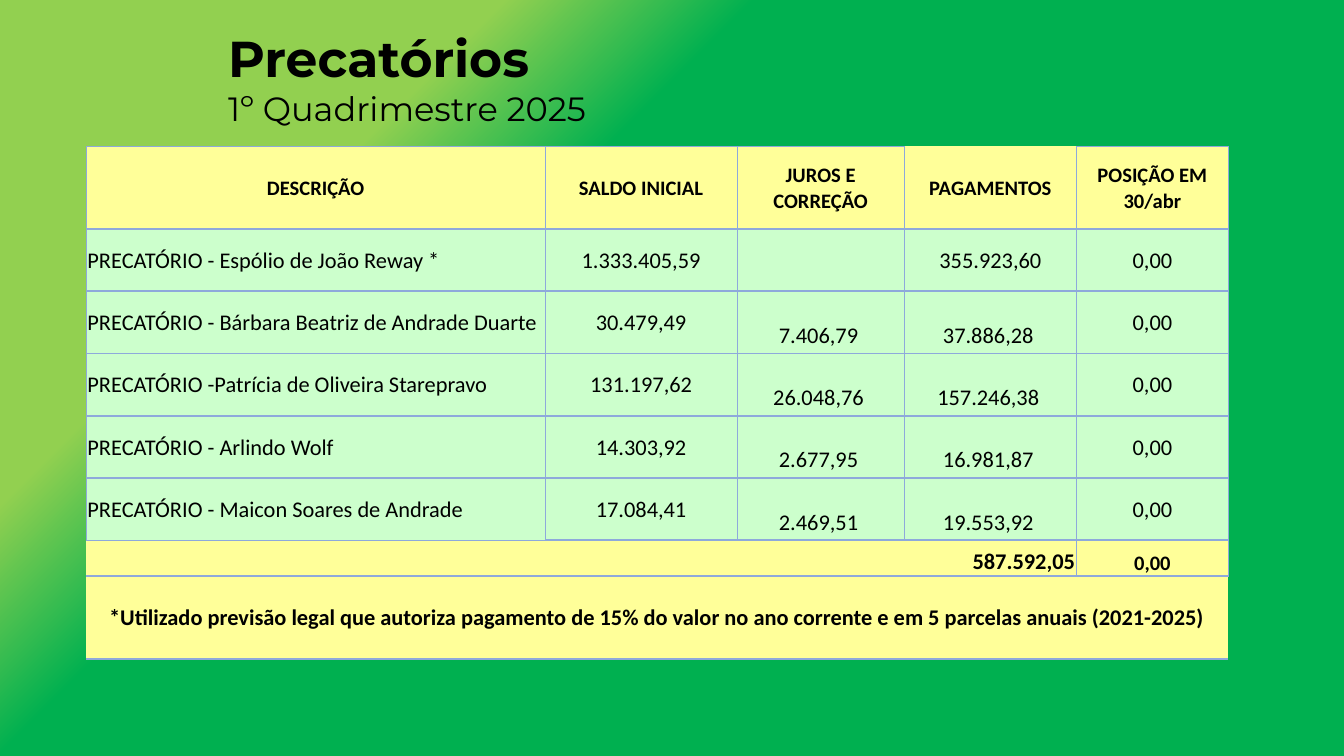
import pptx
import pptx.dml.color
import pptx.enum.text
import pptx.oxml
import pptx.util
from lxml import etree

EMU_PER_PX = 4762.5
ALIGN = pptx.enum.text.PP_ALIGN
ANCHOR = pptx.enum.text.MSO_ANCHOR
YELLOW, MINT, BORDER, BLACK = "FFFF99", "CCFFCC", "8EA9DB", "000000"
COLUMNS = [656, 274, 239, 246, 217]
ROWS = [118] + [89] * 5 + [51, 119]
HEADERS = ["DESCRIÇÃO", "SALDO INICIAL", "JUROS E CORREÇÃO", "PAGAMENTOS", "POSIÇÃO EM 30/abr"]
DEBTS = [
    ["PRECATÓRIO - Espólio de João Reway *", "1.333.405,59", "", "355.923,60", "0,00"],
    ["PRECATÓRIO - Bárbara Beatriz de Andrade Duarte", "30.479,49", "7.406,79", "37.886,28", "0,00"],
    ["PRECATÓRIO -Patrícia de Oliveira Starepravo", "131.197,62", "26.048,76", "157.246,38", "0,00"],
    ["PRECATÓRIO - Arlindo Wolf", "14.303,92", "2.677,95", "16.981,87", "0,00"],
    ["PRECATÓRIO - Maicon Soares de Andrade", "17.084,41", "2.469,51", "19.553,92", "0,00"],
]
TOTALS = ["", "", "", "587.592,05", "0,00"]
FOOTNOTE = ("*Utilizado previsão legal que autoriza pagamento de 15% do valor no ano corrente "
            "e em 5 parcelas anuais (2021-2025)")


def px(length):
    """Turn whole pixels into EMU."""
    return pptx.util.Emu(round(length * EMU_PER_PX))


def colour(value):
    """Turn a hex string into a colour."""
    return pptx.dml.color.RGBColor.from_string(value)


def apply(target, formats):
    """Set every attribute of a dict of format values."""
    for name, value in formats.items():
        setattr(target, name, value)


def add_span(para, text, size, bold, font):
    """Add a black run of text."""
    span = para.add_run()
    span.text = text
    apply(span.font, {"size": pptx.util.Pt(size), "bold": bold, "name": font})
    span.font.color.rgb = colour(BLACK)


def paint_background(page):
    """Fill the page with a diagonal gradient of two greens."""
    fill = page.background.fill
    fill.gradient()
    fill.gradient_angle = 315
    for stop, position, value in zip(fill.gradient_stops, (0.24, 0.36), ("92D050", "00B050")):
        stop.position = position
        stop.color.rgb = colour(value)


def add_heading(page, left, top, width, height):
    """Place the title and the period below it."""
    box = page.shapes.add_textbox(px(left), px(top), px(width), px(height))
    apply(box.text_frame, {"word_wrap": True, "vertical_anchor": ANCHOR.BOTTOM})
    para = box.text_frame.paragraphs[0]
    add_span(para, "Precatórios", 27, True, "Montserrat")
    para.add_line_break()
    add_span(para, "1º Quadrimestre 2025", 18, False, "Montserrat")


def draw_borders(cell, widths):
    """Draw the four sides of a cell, leaving out those of width 0."""
    properties = cell._tc.get_or_add_tcPr()
    for side, width in zip("LRTB", widths):
        line = etree.SubElement(properties, pptx.oxml.ns.qn(f"a:ln{side}"), w=str(pptx.util.Pt(width)))
        if width:
            fill = etree.SubElement(line, pptx.oxml.ns.qn("a:solidFill"))
            etree.SubElement(fill, pptx.oxml.ns.qn("a:srgbClr"), val=BORDER)
        else:
            etree.SubElement(line, pptx.oxml.ns.qn("a:noFill"))


def border_widths(row, column):
    """Give the left, right, top and bottom border widths of a cell."""
    total, footnote = len(ROWS) - 2, len(ROWS) - 1
    left = right = 0.5
    top = bottom = 1
    if row == 0:
        top = 0 if column == 3 else 0.5
    if column == 0 and row == total - 1:
        bottom = 0.5
    if column == 0 and row == total:
        top = 0.5
    if row == footnote or (row == total and column < 4):
        left = 0
    if row == footnote or (row == total and column < 3):
        right = 0
    return left, right, top, bottom


def fill_cell(cell, text, row, column):
    """Write and format one table cell."""
    debt = 0 < row <= len(DEBTS)
    total = row == len(ROWS) - 2
    lowered = 1 < row <= len(DEBTS) and column in (2, 3)
    size = 11 if row == 0 or (total and column == 4) else 12
    draw_borders(cell, border_widths(row, column))
    cell.fill.solid()
    cell.fill.fore_color.rgb = colour(MINT if debt else YELLOW)
    apply(cell, {
        "margin_left": px(2), "margin_right": px(8 if lowered else 2),
        "margin_top": px(2), "margin_bottom": px(6 if lowered else 0),
        "vertical_anchor": ANCHOR.BOTTOM if lowered or total else ANCHOR.MIDDLE,
    })
    para = cell.text_frame.paragraphs[0]
    para.alignment = ALIGN.CENTER
    if debt and column == 0:
        para.alignment = ALIGN.LEFT
    if total and column == 3:
        para.alignment = ALIGN.RIGHT
    if text:
        add_span(para, text, size, not debt, "Calibri")
    else:
        etree.SubElement(para._p, pptx.oxml.ns.qn("a:endParaRPr"), sz=str(size * 100))


def add_debt_table(page, left, top):
    """Place the table of court-ordered debts."""
    frame = page.shapes.add_table(len(ROWS), len(COLUMNS), px(left), px(top), px(sum(COLUMNS)), px(sum(ROWS)))
    table = frame.table
    for column, width in zip(table.columns, COLUMNS):
        column.width = px(width)
    for row, height in zip(table.rows, ROWS):
        row.height = px(height)
    contents = [HEADERS, *DEBTS, TOTALS, [FOOTNOTE, "", "", "", ""]]
    for row, texts in enumerate(contents):
        for column, text in enumerate(texts):
            fill_cell(table.cell(row, column), text, row, column)
    last = len(ROWS) - 1
    table.cell(last, 0).merge(table.cell(last, len(COLUMNS) - 1))


def main():
    """Build the deck and save it."""
    deck = pptx.Presentation()
    apply(deck, {"slide_width": px(1920), "slide_height": px(1080)})
    page = deck.slides.add_slide(deck.slide_layouts[6])
    paint_background(page)
    add_heading(page, 307, 36, 1488, 156)
    add_debt_table(page, 123, 209)
    deck.save("out.pptx")


if __name__ == "__main__":
    main()
